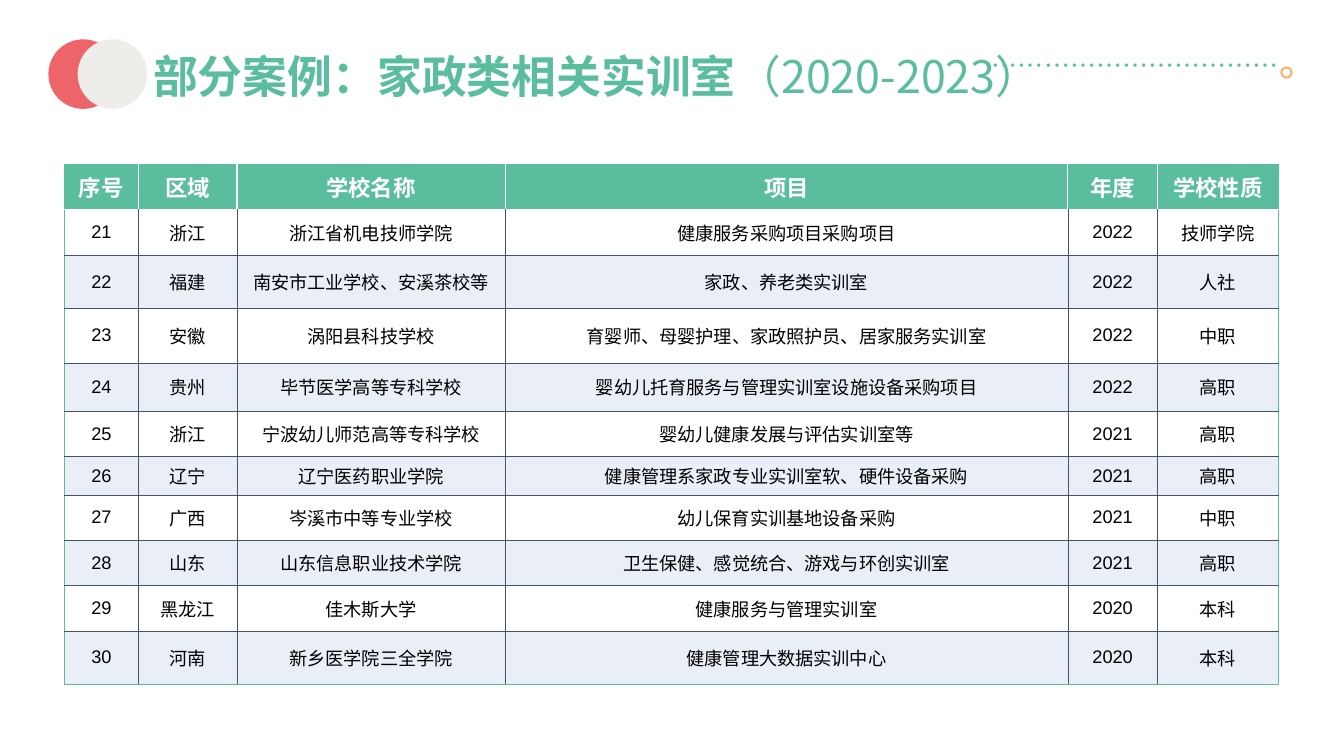
import pptx
import pptx.dml.color
import pptx.enum.lang
import pptx.enum.shapes
import pptx.enum.text
import pptx.oxml
import pptx.oxml.ns
import pptx.util
from pptx.dml.color import RGBColor
from pptx.util import Inches

GREEN = RGBColor(0x5A, 0xBE, 0x9E)
CORAL = RGBColor(0xED, 0x65, 0x68)
PALE_GREY = RGBColor(0xEE, 0xED, 0xE9)
ORANGE = RGBColor(0xF9, 0xB4, 0x6A)
SLATE = RGBColor(0x44, 0x54, 0x6A)
PALE_BLUE = RGBColor(0xEA, 0xEF, 0xF7)
WHITE = RGBColor(0xFF, 0xFF, 0xFF)
BLACK = RGBColor(0x00, 0x00, 0x00)

CJK_FONT = "Noto Sans CJK SC"
ALIGN = pptx.enum.text.PP_ALIGN
ANCHOR = pptx.enum.text.MSO_ANCHOR
CHINESE = pptx.enum.lang.MSO_LANGUAGE_ID.SIMPLIFIED_CHINESE

TITLE_FORMAT = {"size": pptx.util.Pt(32), "name": CJK_FONT, "bold": True}
DOTS_FORMAT = {"size": pptx.util.Pt(18.6), "name": CJK_FONT}
HEADER_FORMAT = {"size": pptx.util.Pt(16), "name": CJK_FONT, "bold": True}
BODY_FORMAT = {"size": pptx.util.Pt(13), "name": "Arial", "bold": False}
MARGINS = ("margin_left", "margin_top", "margin_right", "margin_bottom")

COLUMN_WIDTHS = [0.73, 0.98, 2.66, 5.58, 0.89, 1.2]
ROW_HEIGHTS = [0.45, 0.45, 0.53, 0.54, 0.48, 0.45, 0.38, 0.45, 0.45, 0.45, 0.53]
FIRST_NUMBER = 21
HEADINGS = ("序号", "区域", "学校名称", "项目", "年度", "学校性质")
CASES = [
    ("浙江", "浙江省机电技师学院", "健康服务采购项目采购项目", "2022", "技师学院"),
    ("福建", "南安市工业学校、安溪茶校等", "家政、养老类实训室", "2022", "人社"),
    ("安徽", "涡阳县科技学校", "育婴师、母婴护理、家政照护员、居家服务实训室", "2022", "中职"),
    ("贵州", "毕节医学高等专科学校", "婴幼儿托育服务与管理实训室设施设备采购项目", "2022", "高职"),
    ("浙江", "宁波幼儿师范高等专科学校", "婴幼儿健康发展与评估实训室等", "2021", "高职"),
    ("辽宁", "辽宁医药职业学院", "健康管理系家政专业实训室软、硬件设备采购", "2021", "高职"),
    ("广西", "岑溪市中等专业学校", "幼儿保育实训基地设备采购", "2021", "中职"),
    ("山东", "山东信息职业技术学院", "卫生保健、感觉统合、游戏与环创实训室", "2021", "高职"),
    ("黑龙江", "佳木斯大学", "健康服务与管理实训室", "2020", "本科"),
    ("河南", "新乡医学院三全学院", "健康管理大数据实训中心", "2020", "本科"),
]


def set_attributes(target, values):
    for name, value in values.items():
        setattr(target, name, value)


def add_span(para, text, color, values):
    span = para.add_run()
    span.text = text
    set_attributes(span.font, values)
    span.font.language_id = CHINESE
    span.font.color.rgb = color
    properties = span._r.get_or_add_rPr()
    east_asian = pptx.oxml.parse_xml(
        f'<a:ea {pptx.oxml.ns.nsdecls("a")} typeface="{CJK_FONT}"/>')
    properties.find(pptx.oxml.ns.qn("a:latin")).addnext(east_asian)


def add_circle(page, left, top, diameter, fill=None, line=None):
    circle = page.shapes.add_shape(
        pptx.enum.shapes.MSO_SHAPE.OVAL,
        Inches(left), Inches(top), Inches(diameter), Inches(diameter))
    circle.shadow.inherit = False
    if fill is None:
        circle.fill.background()
    else:
        circle.fill.solid()
        circle.fill.fore_color.rgb = fill
    if line is None:
        circle.line.fill.background()
    else:
        circle.line.color.rgb = line
        circle.line.width = pptx.util.Pt(1.5)


def add_title(page):
    box = page.shapes.add_textbox(Inches(1.42), Inches(0.43), Inches(9.23), Inches(1.18))
    box.text_frame.word_wrap = False
    box.text_frame.auto_size = pptx.enum.text.MSO_AUTO_SIZE.SHAPE_TO_FIT_TEXT
    para = box.text_frame.paragraphs[0]
    add_span(para, "部分案例：家政类相关实训室", GREEN, TITLE_FORMAT)
    add_span(para, "（2020-2023）", GREEN, {**TITLE_FORMAT, "bold": False})


def add_dots(page):
    box = page.shapes.add_textbox(Inches(3.05), Inches(0.49), Inches(9.63), Inches(0.36))
    set_attributes(box.text_frame, {
        **dict.fromkeys(MARGINS, 0),
        "word_wrap": True,
        "vertical_anchor": ANCHOR.MIDDLE,
    })
    para = box.text_frame.paragraphs[0]
    set_attributes(para, {"alignment": ALIGN.RIGHT, "line_spacing": 0.88})
    add_span(para, "……………………………", GREEN, DOTS_FORMAT)


def add_border(cell, side, color, points):
    cell._tc.get_or_add_tcPr().append(pptx.oxml.parse_xml(
        f'<a:ln{side} {pptx.oxml.ns.nsdecls("a")} w="{pptx.util.Pt(points)}">'
        f'<a:solidFill><a:srgbClr val="{color}"/></a:solidFill></a:ln{side}>'))


def edge_style(edge, last_edge, row):
    if edge in (0, last_edge):
        return GREEN, 1
    return (WHITE, 1) if row == 0 else (SLATE, 0.25)


def add_borders(cell, row, column):
    last_column, last_row = len(HEADINGS), len(ROW_HEIGHTS)
    add_border(cell, "L", *edge_style(column, last_column, row))
    add_border(cell, "R", *edge_style(column + 1, last_column, row))
    add_border(cell, "T", *edge_style(row, last_row, row - 1))
    add_border(cell, "B", *edge_style(row + 1, last_row, row))


def fill_cell(cell, text, row, column):
    set_attributes(cell, {
        **dict.fromkeys(MARGINS, Inches(0.01)),
        "vertical_anchor": ANCHOR.MIDDLE,
    })
    add_borders(cell, row, column)
    cell.fill.solid()
    if row == 0:
        cell.fill.fore_color.rgb = GREEN
    else:
        cell.fill.fore_color.rgb = WHITE if row % 2 else PALE_BLUE
    para = cell.text_frame.paragraphs[0]
    para.alignment = ALIGN.CENTER
    if row == 0:
        add_span(para, text, WHITE, HEADER_FORMAT)
    else:
        add_span(para, text, BLACK, BODY_FORMAT)


def add_case_table(page):
    rows = [HEADINGS]
    rows += [(str(number), *case) for number, case in enumerate(CASES, FIRST_NUMBER)]
    table = page.shapes.add_table(
        len(rows), len(HEADINGS), Inches(0.64), Inches(1.63),
        Inches(sum(COLUMN_WIDTHS)), Inches(sum(ROW_HEIGHTS))).table
    for column, width in zip(table.columns, COLUMN_WIDTHS):
        column.width = Inches(width)
    for row, height in zip(table.rows, ROW_HEIGHTS):
        row.height = Inches(height)
    for row_index, texts in enumerate(rows):
        for column_index, text in enumerate(texts):
            fill_cell(table.cell(row_index, column_index), text, row_index, column_index)


def main():
    deck = pptx.Presentation()
    deck.slide_width = Inches(13.33)
    deck.slide_height = Inches(7.5)
    page = deck.slides.add_slide(deck.slide_layouts[6])
    add_title(page)
    add_circle(page, 0.48, 0.39, 0.69, fill=CORAL)
    add_circle(page, 0.77, 0.39, 0.69, fill=PALE_GREY)
    add_dots(page)
    add_circle(page, 12.71, 0.67, 0.1, line=ORANGE)
    add_case_table(page)
    deck.save("out.pptx")


if __name__ == "__main__":
    main()
